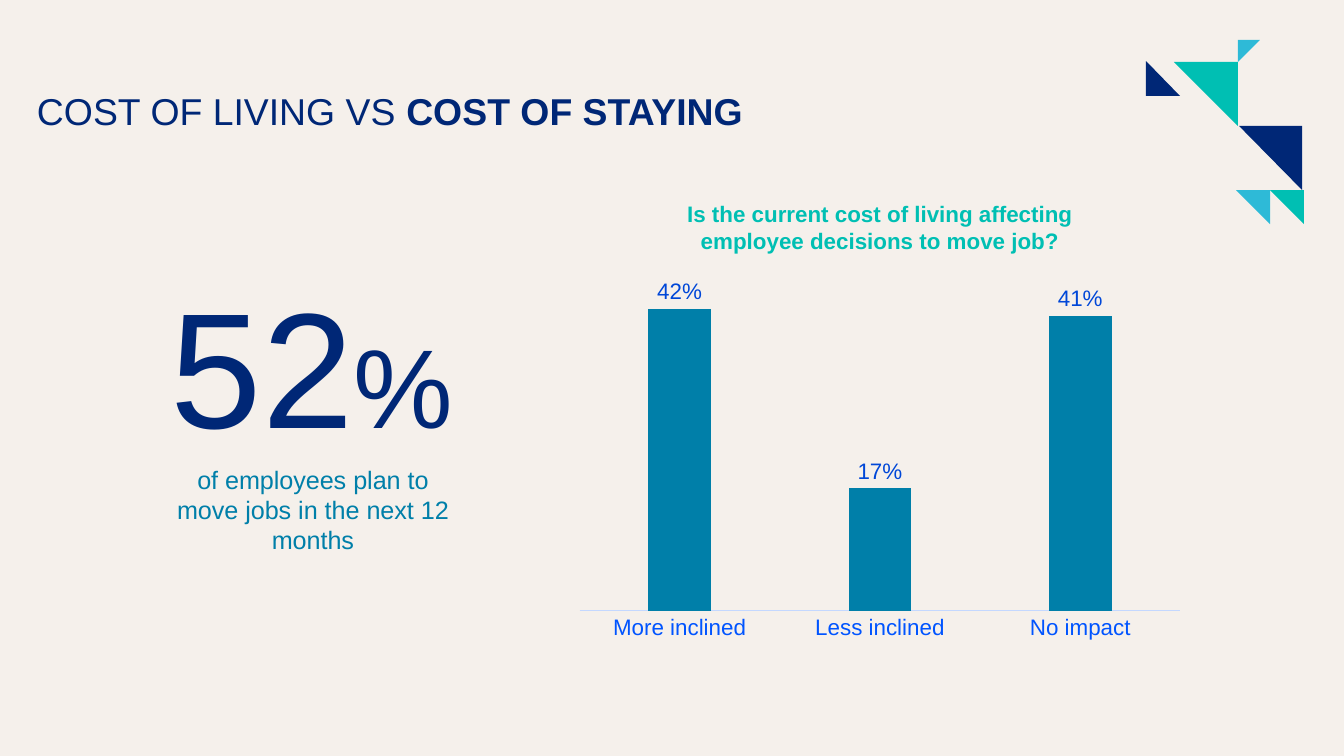
"""Build the cost of living versus cost of staying slide."""
from dataclasses import dataclass

from lxml.etree import SubElement
from pptx import Presentation
from pptx.chart.data import CategoryChartData
from pptx.dml.color import RGBColor
from pptx.enum.chart import XL_CHART_TYPE, XL_LABEL_POSITION, XL_TICK_MARK
from pptx.enum.text import PP_ALIGN
from pptx.oxml.ns import qn
from pptx.slide import Slide
from pptx.text.text import Font
from pptx.util import Emu, Pt

EMU_PER_PX = 914400 / 134.4


@dataclass(frozen=True)
class Theme:
    font: str = "Arial"
    background: str = "F5F0EB"
    navy: str = "002776"
    teal: str = "00BFB3"
    cyan: str = "2EBAD7"
    blue: str = "007FA9"
    label: str = "0047D8"
    category: str = "0054FF"
    axis: str = "C4D8FF"
    title_size: float = 20
    figure_size: float = 88
    percent_size: float = 60
    body_size: float = 13.5
    chart_size: float = 12


@dataclass(frozen=True)
class Triangle:
    x: int
    y: int
    dx: int
    dy: int
    color: str


@dataclass(frozen=True)
class Run:
    text: str
    size: float
    color: str
    bold: bool = False


@dataclass(frozen=True)
class TextBlock:
    x: int
    y: int
    w: int
    h: int
    runs: tuple[Run, ...]
    align: PP_ALIGN = PP_ALIGN.CENTER
    inset_x: int = 0
    inset_y: int = 0
    spacing: float = 1.0


THEME = Theme()

TRIANGLES = (
    Triangle(1146, 96, 34, -35, THEME.navy),
    Triangle(1270, 190, -34, 34, THEME.cyan),
    Triangle(1304, 190, -34, 34, THEME.teal),
    Triangle(1238, 62, -64, 64, THEME.teal),
    Triangle(1238, 40, 22, 22, THEME.cyan),
    Triangle(1302, 126, -63, 64, THEME.navy),
)

TEXTS = (
    TextBlock(37, 95, 1144, 70, (
        Run("COST OF LIVING VS ", THEME.title_size, THEME.navy),
        Run("COST OF STAYING", THEME.title_size, THEME.navy, True),
    ), PP_ALIGN.LEFT, spacing=0.85),
    TextBlock(151, 457, 324, 129, (
        Run("of employees plan to move jobs in the next 12 months",
            THEME.body_size, THEME.blue),
    ), inset_x=13, inset_y=7),
    TextBlock(128, 257, 368, 129, (
        Run("52", THEME.figure_size, THEME.navy),
        Run("%", THEME.percent_size, THEME.navy),
    ), inset_x=13, inset_y=7),
    TextBlock(640, 200, 480, 90, (
        Run("Is the current cost of living affecting employee decisions to move job?",
            THEME.chart_size, THEME.teal, True),
    )),
)


def px(n: int) -> Emu:
    return Emu(round(n * EMU_PER_PX))


def rgb(color: str) -> RGBColor:
    return RGBColor.from_string(color)


def style_font(font: Font, size: float, color: str, bold: bool = False) -> None:
    font.name = THEME.font
    font.size = Pt(size)
    font.bold = bold
    font.color.rgb = rgb(color)


def draw_triangle(s: Slide, t: Triangle) -> None:
    builder = s.shapes.build_freeform(t.x, t.y, scale=EMU_PER_PX)
    builder.add_line_segments([(t.x + t.dx, t.y), (t.x, t.y + t.dy)], close=True)
    sp = builder.convert_to_shape()
    sp.shadow.inherit = False
    sp.fill.solid()
    sp.fill.fore_color.rgb = rgb(t.color)
    sp.line.fill.background()


def draw_text(s: Slide, block: TextBlock) -> None:
    sp = s.shapes.add_textbox(px(block.x), px(block.y), px(block.w), px(block.h))
    tf = sp.text_frame
    tf.word_wrap = True
    tf.margin_left = tf.margin_right = px(block.inset_x)
    tf.margin_top = tf.margin_bottom = px(block.inset_y)
    p = tf.paragraphs[0]
    p.alignment = block.align
    p.line_spacing = block.spacing
    for run in block.runs:
        r = p.add_run()
        r.text = run.text
        style_font(r.font, run.size, run.color, run.bold)


def draw_chart(s: Slide) -> None:
    data = CategoryChartData(number_format="0%")
    data.categories = ["More inclined", "Less inclined", "No impact"]
    data.add_series("Series 1", (0.42, 0.17, 0.41))
    chart = s.shapes.add_chart(
        XL_CHART_TYPE.COLUMN_CLUSTERED, px(567), px(280), px(626), px(367), data
    ).chart
    style_font(chart.font, 10, THEME.navy)
    chart.has_title = False
    chart.has_legend = False

    values = chart.value_axis
    values.visible = False
    values.has_major_gridlines = False
    values.minimum_scale, values.maximum_scale = 0, 0.45

    categories = chart.category_axis
    categories.major_tick_mark = XL_TICK_MARK.NONE
    categories.format.line.color.rgb = rgb(THEME.axis)
    categories.format.line.width = Pt(0.75)
    style_font(categories.tick_labels.font, THEME.chart_size, THEME.category)

    plot = chart.plots[0]
    plot.gap_width, plot.overlap = 219, -27
    plot.vary_by_categories = False
    fill = plot.series[0].format.fill
    fill.solid()
    fill.fore_color.rgb = rgb(THEME.blue)
    plot.has_data_labels = True
    labels = plot.data_labels
    labels.show_value = True
    labels.number_format, labels.number_format_is_linked = "0%", False
    labels.position = XL_LABEL_POSITION.OUTSIDE_END
    style_font(labels.font, THEME.chart_size, THEME.label)


def main() -> None:
    prs = Presentation()
    prs.slide_width, prs.slide_height = px(1344), px(756)
    s = prs.slides.add_slide(prs.slide_layouts[6])
    s.background.fill.solid()
    s.background.fill.fore_color.rgb = rgb(THEME.background)
    for triangle in TRIANGLES:
        draw_triangle(s, triangle)
    for block in TEXTS:
        draw_text(s, block)
    draw_chart(s)
    prs.save("out.pptx")


if __name__ == "__main__":
    main()
